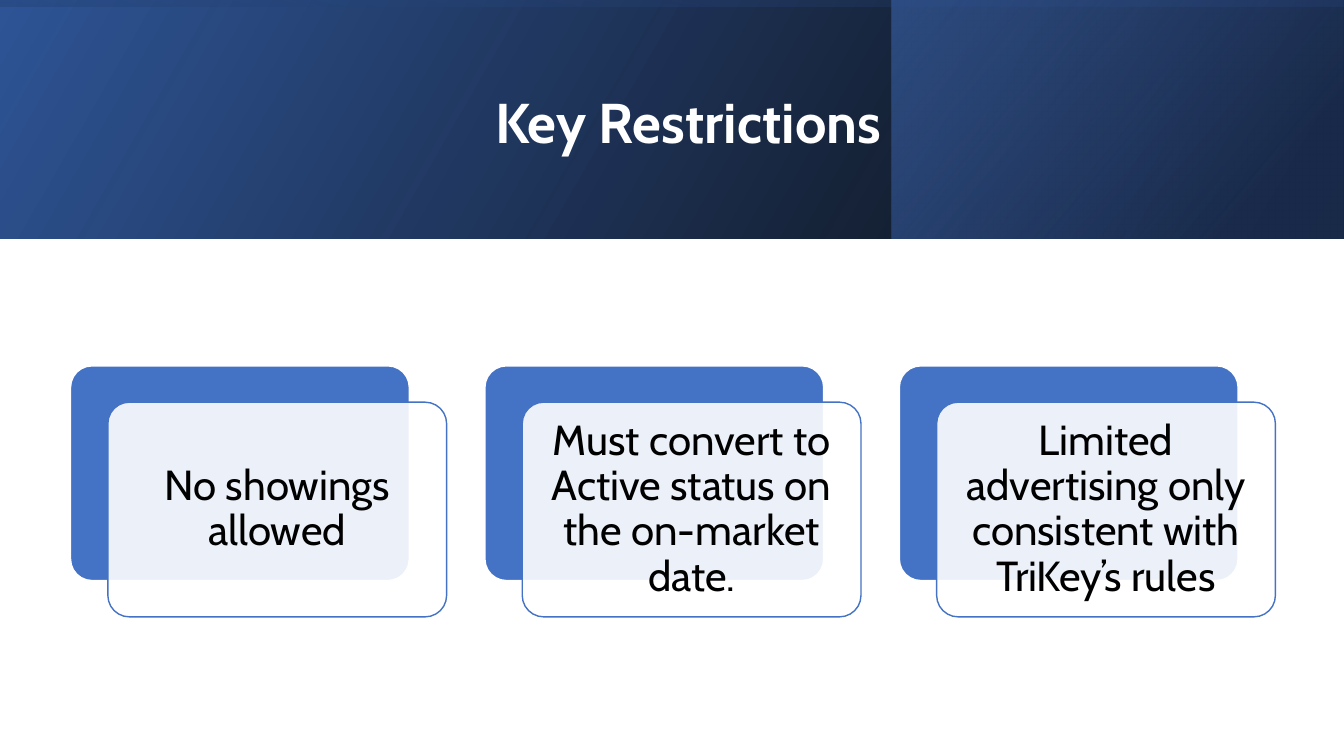
from lxml.etree import SubElement
from pptx import Presentation
from pptx.dml.color import RGBColor
from pptx.enum.shapes import MSO_SHAPE as SHAPE
from pptx.enum.text import MSO_ANCHOR as ANCHOR, PP_ALIGN as ALIGN
from pptx.oxml.ns import qn
from pptx.util import Inches, Pt

WHITE = RGBColor(0xFF, 0xFF, 0xFF)
BLACK = RGBColor(0, 0, 0)
BLUE = RGBColor(0x44, 0x72, 0xC4)
MID_BLUE = RGBColor(0x2F, 0x55, 0x97)
NAVY = RGBColor(0x20, 0x38, 0x64)

prs = Presentation()
prs.slide_width, prs.slide_height = Inches(13.33), Inches(7.5)
s = prs.slides.add_slide(prs.slide_layouts[6])


def set_alpha(sp, percents):
    for clr, percent in zip(sp._element.spPr.iter(qn("a:srgbClr")), percents):
        SubElement(clr, qn("a:alpha")).set("val", str(percent * 1000))


def add_text(box, text, margin, font):
    tb = s.shapes.add_textbox(*map(Inches, box))
    tf = tb.text_frame
    tf.word_wrap = True
    tf.vertical_anchor = ANCHOR.MIDDLE
    for side in ("left", "right", "top", "bottom"):
        setattr(tf, f"margin_{side}", Inches(margin))
    p = tf.paragraphs[0]
    p.alignment, p.line_spacing = ALIGN.CENTER, 0.9
    r = p.add_run()
    r.text = text
    r.font.color.rgb = font["color"]
    for name, value in font["format"].items():
        setattr(r.font, name, value)


bands = [
    ((0, 0, 13.33, 2.37), 0, 330, [(0, BLACK, 96), (1, MID_BLUE, 100)]),
    ((8.84, 0, 4.48, 2.37), 0, 320, [(0.19, NAVY, 68), (1, BLUE, 48)]),
    ((5.48, -5.48, 2.37, 13.33), 270, 350, [(0.23, MID_BLUE, 16), (0.99, BLACK, 45)]),
]
for box, rotation, angle, stops in bands:
    sp = s.shapes.add_shape(SHAPE.RECTANGLE, *map(Inches, box))
    sp.shadow.inherit = False
    sp.line.fill.background()
    sp.rotation = rotation
    sp._element.spPr.xfrm.set("flipH", "1")
    sp.fill.gradient()
    sp.fill.gradient_angle = 360 - angle
    for stop, (position, color, _) in zip(sp.fill.gradient_stops, stops):
        stop.position = position
        stop.color.rgb = color
    set_alpha(sp, [alpha for _, _, alpha in stops])

title_font = {"color": WHITE, "format": {"name": "Cabin", "size": Pt(40), "bold": True}}
card_font = {"color": BLACK, "format": {"name": "Cabin", "size": Pt(30)}}

add_text((1.51, 0.38, 10.63, 1.72), "Key Restrictions", 0.1, title_font)

restrictions = [
    "No showings allowed",
    "Must convert to Active status on the on-market date.",
    "Limited advertising only consistent with TriKey’s rules",
]
LEFT, TOP, PITCH, WIDTH, HEIGHT = 0.7, 3.63, 4.11, 3.36, 2.13
OFFSET_X, OFFSET_Y, INSET = 0.37, 0.36, 0.06

for i, text in enumerate(restrictions):
    x = LEFT + i * PITCH
    front_x, front_y = x + OFFSET_X, TOP + OFFSET_Y
    for left, top, fill, line, alpha in [
        (x, TOP, BLUE, WHITE, 100),
        (front_x, front_y, WHITE, BLUE, 90),
    ]:
        sp = s.shapes.add_shape(SHAPE.ROUNDED_RECTANGLE, *map(Inches, (left, top, WIDTH, HEIGHT)))
        sp.adjustments[0] = 0.1
        sp.shadow.inherit = False
        sp.fill.solid()
        sp.fill.fore_color.rgb = fill
        set_alpha(sp, [alpha])
        sp.line.color.rgb = line
        sp.line.width = Pt(1)
    add_text(
        (front_x + INSET, front_y + INSET, WIDTH - 2 * INSET, HEIGHT - 2 * INSET),
        text, 0.12, card_font,
    )

prs.save("out.pptx")
